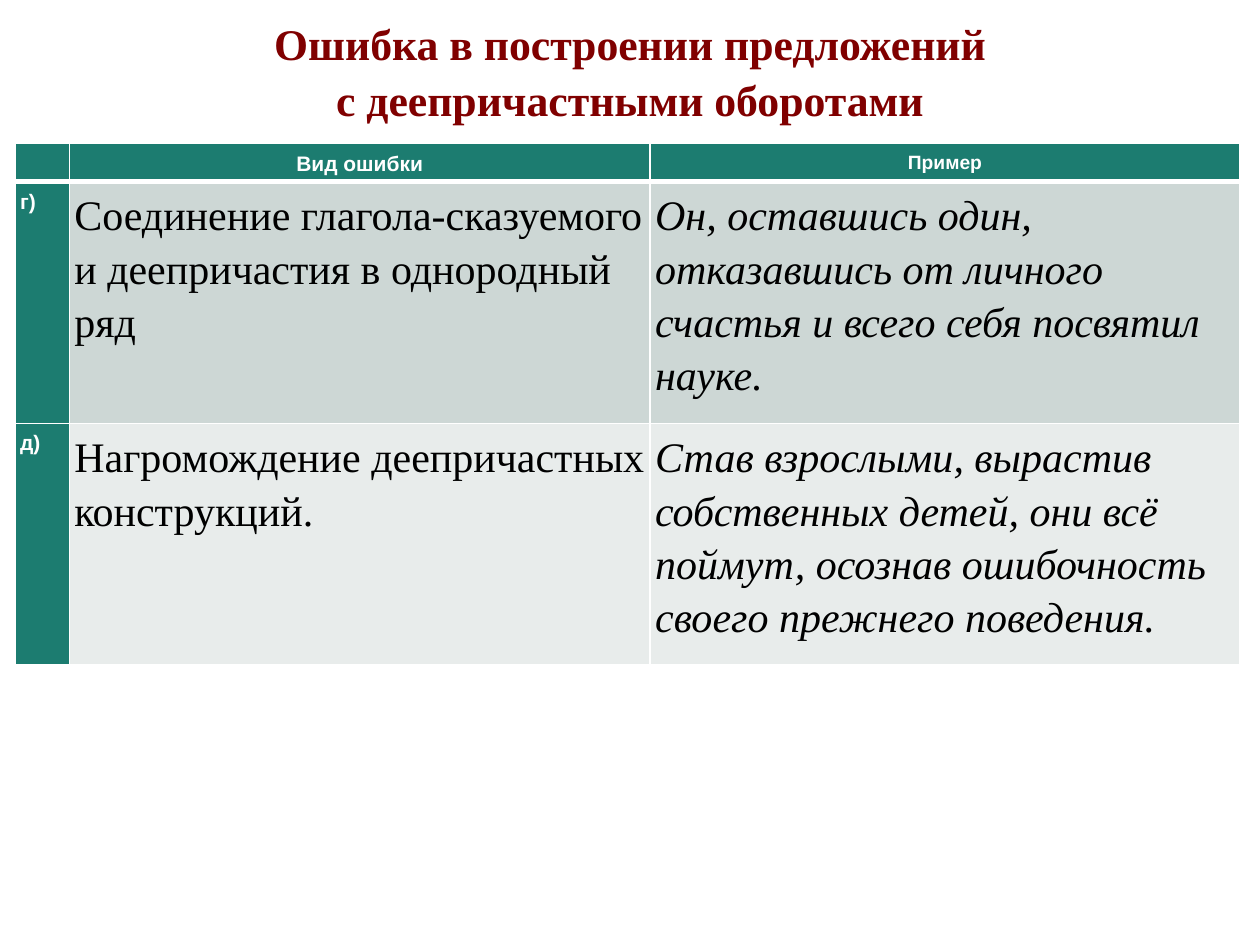
from lxml.etree import SubElement
from pptx import Presentation
from pptx.dml.color import RGBColor
from pptx.enum.text import MSO_ANCHOR, MSO_AUTO_SIZE, PP_ALIGN
from pptx.oxml.ns import qn
from pptx.util import Inches, Pt

SERIF, SANS = "Times New Roman", "Arial"
TEAL, WHITE, BLACK, MAROON = "1C7C70", "FFFFFF", "000000", "800000"
BANDS = ("CDD7D5", "E8ECEB")
TITLE = ("Ошибка в построении предложений", "с деепричастными оборотами")
HEADERS = ("", "Вид ошибки", "Пример")
ERRORS = (
    ("г)", "Соединение глагола-сказуемого и деепричастия в однородный ряд",
     "Он, оставшись один, отказавшись от личного счастья и всего себя посвятил науке."),
    ("д)", "Нагромождение деепричастных конструкций.",
     "Став взрослыми, вырастив собственных детей, они всё поймут, "
     "осознав ошибочность своего прежнего поведения."),
)
COL_WIDTHS = (0.43, 4.61, 4.68)
ROW_HEIGHTS = (0.3, 1.92, 1.92)


def color(hex_value):
    return RGBColor.from_string(hex_value)


def write(p, text, size=12, font=SANS, fill=WHITE, bold=False, italic=False,
          align=PP_ALIGN.LEFT, spacing=1.15):
    p.alignment = align
    p.line_spacing = spacing
    if not text:
        # The end mark sets the height of an empty line.
        SubElement(p._p, qn("a:endParaRPr"), sz=str(size * 100))
        return
    r = p.add_run()
    r.text = text
    r.font.size = Pt(size)
    r.font.name = font
    r.font.bold = bold
    r.font.italic = italic
    r.font.color.rgb = color(fill)


def set_borders(cell, bottom=1):
    """Draw white cell borders; fill must be set afterwards to keep XML order."""
    tc_pr = cell._tc.get_or_add_tcPr()
    for side, width in (("L", 1), ("R", 1), ("T", 1), ("B", bottom)):
        ln = SubElement(tc_pr, qn(f"a:ln{side}"), w=str(Pt(width)))
        SubElement(SubElement(ln, qn("a:solidFill")), qn("a:srgbClr"), val=WHITE)


def add_title(slide, left, top, width, height):
    sp = slide.shapes.title
    sp.left, sp.top, sp.width, sp.height = map(Inches, (left, top, width, height))
    tf = sp.text_frame
    tf.word_wrap = True
    tf.auto_size = MSO_AUTO_SIZE.NONE
    tf.vertical_anchor = MSO_ANCHOR.TOP
    for i, line in enumerate(TITLE):
        p = tf.add_paragraph() if i else tf.paragraphs[0]
        p.space_before = Pt(0)
        write(p, line, size=25, font=SERIF, fill=MAROON, bold=True,
              align=PP_ALIGN.CENTER, spacing=1.07)


def fill_cell(cell, text, fill, bottom=1, **fmt):
    cell.margin_left = cell.margin_right = Inches(0.04)
    cell.margin_top = cell.margin_bottom = Inches(0.04)
    set_borders(cell, bottom)
    cell.fill.solid()
    cell.fill.fore_color.rgb = color(fill)
    write(cell.text_frame.paragraphs[0], text, **fmt)


def add_error_table(slide, left, top):
    table = slide.shapes.add_table(
        len(ROW_HEIGHTS), len(COL_WIDTHS), Inches(left), Inches(top),
        Inches(sum(COL_WIDTHS)), Inches(sum(ROW_HEIGHTS))).table
    for col, width in zip(table.columns, COL_WIDTHS):
        col.width = Inches(width)
    for row, height in zip(table.rows, ROW_HEIGHTS):
        row.height = Inches(height)
    for c, (text, size) in enumerate(zip(HEADERS, (12, 12, 11))):
        fill_cell(table.cell(0, c), text, TEAL, bottom=3, size=size, bold=True,
                  align=PP_ALIGN.CENTER)
    for r, ((mark, error, example), band) in enumerate(zip(ERRORS, BANDS), 1):
        body = dict(size=24, font=SERIF, fill=BLACK)
        fill_cell_text(table, r, mark, error, example, band, body)


def fill_cell_text(table, r, mark, error, example, band, body):
    """Fill one body row: its letter, the kind of error and the example."""
    fill_cell(table.cell(r, 0), mark, TEAL, bold=True)
    for c, text in enumerate((error, example), 1):
        cell = table.cell(r, c)
        cell.margin_left = cell.margin_right = Inches(0.04)
        cell.margin_top = cell.margin_bottom = Inches(0.04)
        set_borders(cell)
        cell.fill.solid()
        cell.fill.fore_color.rgb = color(band)
        write(cell.text_frame.paragraphs[0], text, italic=c == 2, **body)


def main():
    prs = Presentation()
    prs.slide_width, prs.slide_height = Inches(10), Inches(7.5)
    slide = prs.slides.add_slide(prs.slide_layouts[5])
    slide.background.fill.solid()
    slide.background.fill.fore_color.rgb = color(WHITE)
    add_title(slide, 0.12, 0.05, 9.76, 0.94)
    add_error_table(slide, 0.12, 1.14)
    prs.save("out.pptx")


if __name__ == "__main__":
    main()
